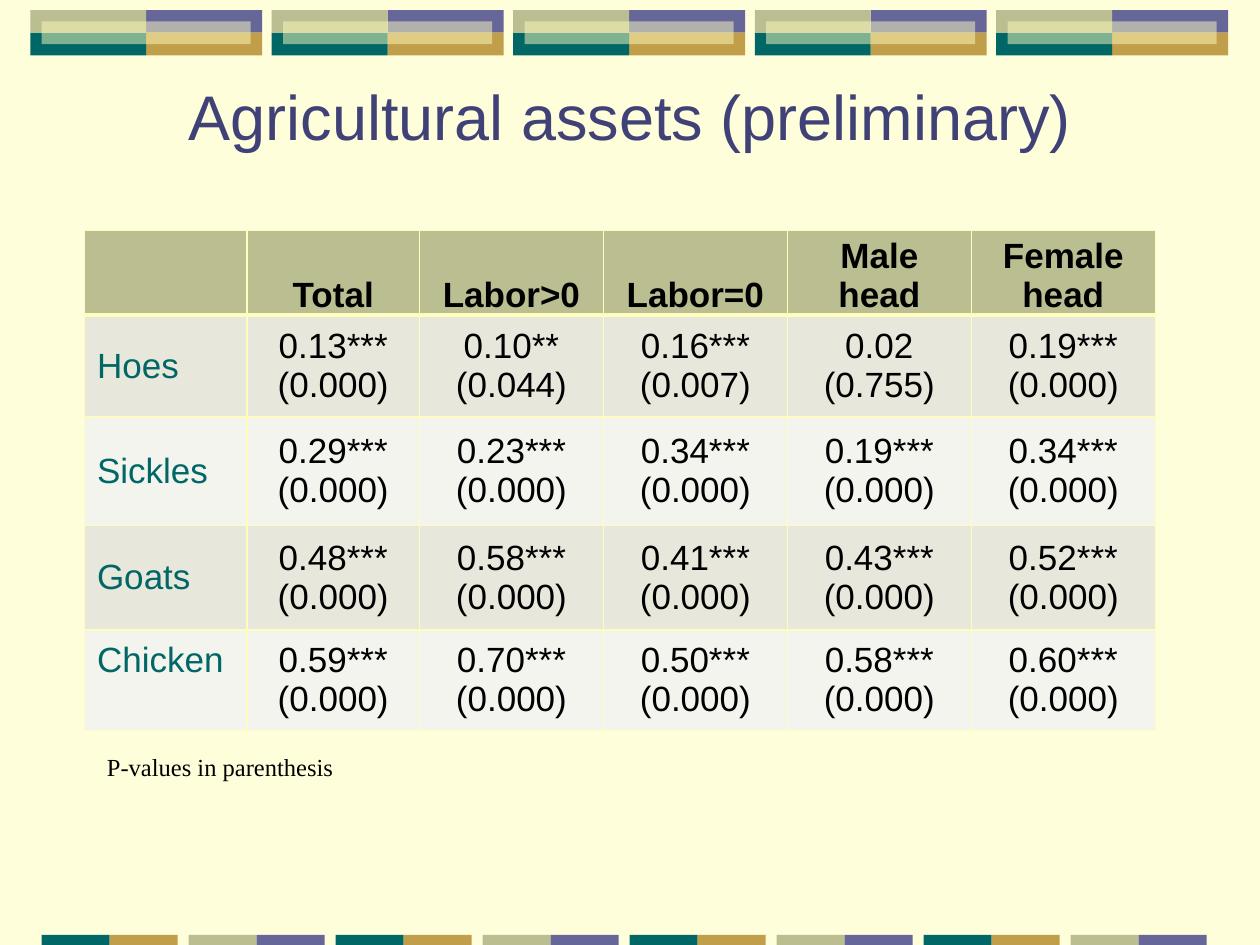
"""Build the agricultural assets slide with its table of estimates and p-values."""
import pptx
import pptx.dml.color
import pptx.enum.shapes
import pptx.enum.text
import pptx.util
from lxml import etree
from pptx.oxml.ns import qn

Inches, Pt = pptx.util.Inches, pptx.util.Pt
ANCHOR, ALIGN = pptx.enum.text.MSO_ANCHOR, pptx.enum.text.PP_ALIGN

COLORS = {
    "background": "FFFEDB", "title": "404176", "text": "000000", "border": "FFFDBD",
    "violet": "666699", "gold": "C09E4A", "teal": "006666", "olive": "BABE90",
    "odd row": "E7E8DB", "even row": "F3F4EE",
}
TITLE = "Agricultural assets (preliminary)"
NOTE = "P-values in parenthesis"
HEADERS = ["", "Total", "Labor>0", "Labor=0", "Male head", "Female head"]
ROWS = [
    ("Hoes", "0.13*** (0.000)", "0.10** (0.044)", "0.16*** (0.007)", "0.02 (0.755)", "0.19*** (0.000)"),
    ("Sickles", "0.29*** (0.000)", "0.23*** (0.000)", "0.34*** (0.000)", "0.19*** (0.000)", "0.34*** (0.000)"),
    ("Goats", "0.48*** (0.000)", "0.58*** (0.000)", "0.41*** (0.000)", "0.43*** (0.000)", "0.52*** (0.000)"),
    ("Chicken", "0.59*** (0.000)", "0.70*** (0.000)", "0.50*** (0.000)", "0.58*** (0.000)", "0.60*** (0.000)"),
]
COLUMN_WIDTHS = [1.29, 1.37] + [1.46] * 4
ROW_HEIGHTS = [0.67, 0.81, 0.86, 0.83, 0.8]
TOP_BAND = {"count": 5, "left": 0.24, "top": 0.08, "pitch": 11.5 / 6, "width": 0.92, "height": 0.18}
BOTTOM_BAND = {"count": 8, "left": 0.33, "top": 7.42, "pitch": 7 / 6, "width": 0.54, "height": 0.08}


def rgb(name):
    return pptx.dml.color.RGBColor.from_string(COLORS[name])


def add_block(slide, color, left, top, width, height):
    shape = slide.shapes.add_shape(
        pptx.enum.shapes.MSO_SHAPE.RECTANGLE, *map(Inches, (left, top, width, height)))
    shape.shadow.inherit = False
    shape.fill.solid()
    shape.fill.fore_color.rgb = rgb(color)
    shape.line.fill.background()
    return shape


def add_top_band(slide, count, left, top, pitch, width, height):
    for index in range(count):
        start = left + index * pitch
        for color, column, row in (("violet", 1, 0), ("gold", 1, 1), ("teal", 0, 1), ("olive", 0, 0)):
            add_block(slide, color, start + column * width, top + row * height, width, height)
        overlay = add_block(slide, "border", start + height / 2, top + height / 2,
                            2 * width - height, height)
        color_element = overlay._element.spPr.find(qn("a:solidFill"))[0]
        etree.SubElement(color_element, qn("a:alpha"), val="50000")


def add_bottom_band(slide, count, left, top, pitch, width, height):
    for index in range(count):
        pair = ("olive", "violet") if index % 2 else ("teal", "gold")
        for column, color in enumerate(pair):
            add_block(slide, color, left + index * pitch + column * width, top, width, height)


def format_text(text_frame, font_name, size, color, bold=False, alignment=ALIGN.LEFT):
    for paragraph in text_frame.paragraphs:
        paragraph.alignment = alignment
        for run in paragraph.runs:
            run.font.name, run.font.size, run.font.bold = font_name, Pt(size), bold
            run.font.color.rgb = rgb(color)


def add_borders(cell, header):
    properties = cell._tc.get_or_add_tcPr()
    for side in "LRTB":
        width = 3 if header and side == "B" else 1
        line = etree.SubElement(properties, qn(f"a:ln{side}"), w=str(Pt(width)))
        fill = etree.SubElement(line, qn("a:solidFill"))
        etree.SubElement(fill, qn("a:srgbClr"), val=COLORS["border"])


def format_cell(cell, text, row, column):
    header, label = row == 0, column == 0
    cell.text_frame.text = text if header or label else text.replace(" ", "\n")
    format_text(cell.text_frame, "Arial", 20, "teal" if label else "text", header,
                ALIGN.LEFT if label else ALIGN.CENTER)
    cell.vertical_anchor = ANCHOR.BOTTOM if header else ANCHOR.MIDDLE
    if not label:
        cell.margin_left = cell.margin_right = Inches(0.07)
        cell.margin_top = cell.margin_bottom = 0
    elif row == len(ROWS):
        cell.vertical_anchor = ANCHOR.TOP
        cell.margin_top = Inches(0.09)
    add_borders(cell, header)
    cell.fill.solid()
    cell.fill.fore_color.rgb = rgb("olive" if header else "odd row" if row % 2 else "even row")


def add_estimates(slide):
    table = slide.shapes.add_table(
        len(ROW_HEIGHTS), len(COLUMN_WIDTHS), Inches(0.67), Inches(1.83),
        Inches(sum(COLUMN_WIDTHS)), Inches(sum(ROW_HEIGHTS))).table
    for column, width in zip(table.columns, COLUMN_WIDTHS):
        column.width = Inches(width)
    for row, height in zip(table.rows, ROW_HEIGHTS):
        row.height = Inches(height)
    for row, texts in enumerate([HEADERS, *ROWS]):
        for column, text in enumerate(texts):
            format_cell(table.cell(row, column), text, row, column)


def main():
    presentation = pptx.Presentation()
    presentation.slide_width, presentation.slide_height = Inches(10), Inches(7.5)
    slide = presentation.slides.add_slide(presentation.slide_layouts[5])
    slide.background.fill.solid()
    slide.background.fill.fore_color.rgb = rgb("background")

    add_top_band(slide, **TOP_BAND)
    add_bottom_band(slide, **BOTTOM_BAND)

    title = slide.shapes.title
    title.left, title.top, title.width, title.height = map(Inches, (0.25, 0.5, 9.5, 0.83))
    title.text_frame.text = TITLE
    title.text_frame.vertical_anchor = ANCHOR.MIDDLE
    format_text(title.text_frame, "Arial", 36, "title", alignment=ALIGN.CENTER)

    add_estimates(slide)

    note = slide.shapes.add_textbox(*map(Inches, (0.75, 5.92, 2.42, 0.34)))
    note.text_frame.word_wrap = True
    note.text_frame.text = NOTE
    format_text(note.text_frame, "Times New Roman", 14, "text")

    presentation.save("out.pptx")


if __name__ == "__main__":
    main()
